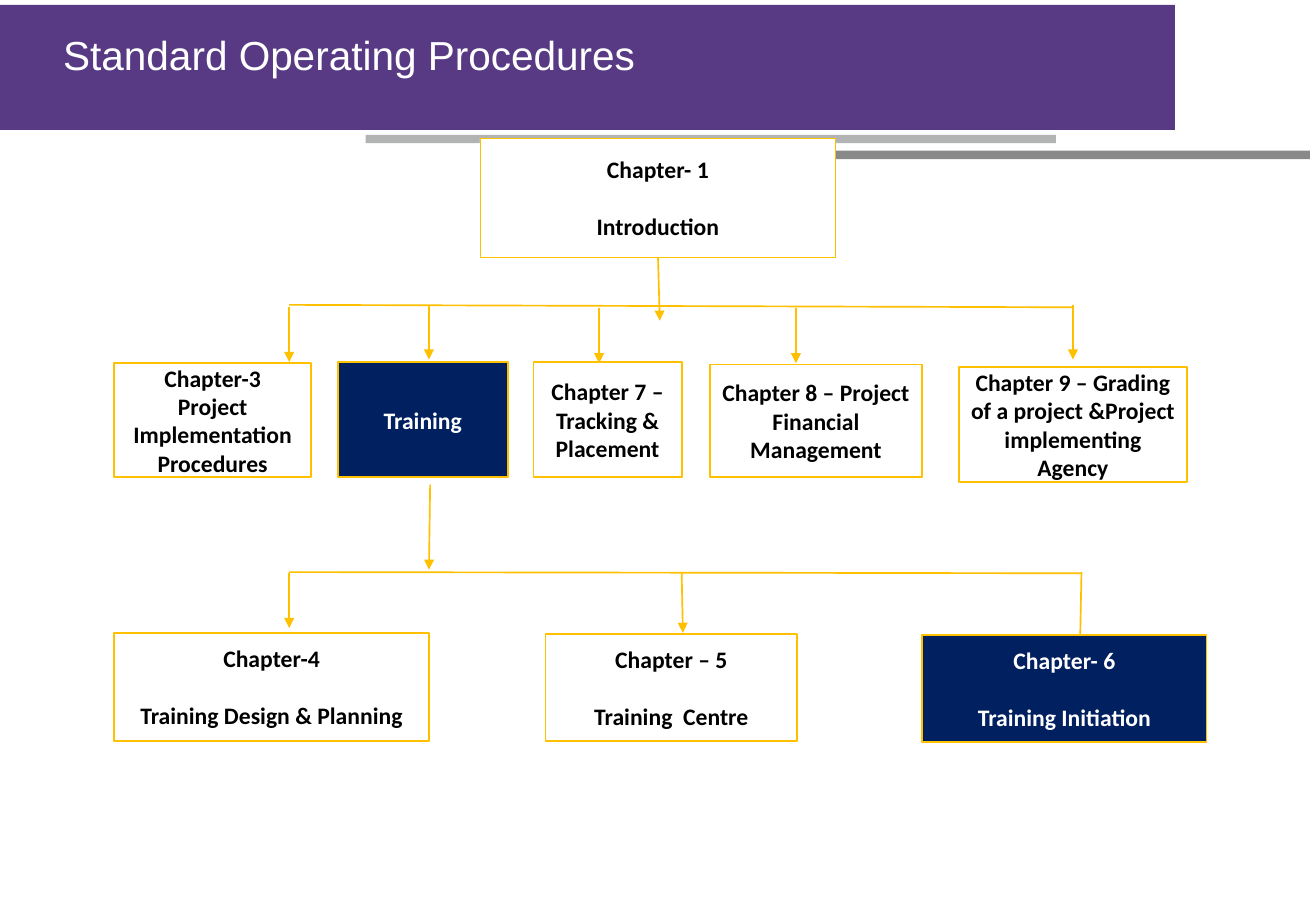
"""Build the Standard Operating Procedures chapter chart slide."""
from dataclasses import dataclass

from lxml.etree import SubElement
from pptx import Presentation
from pptx.dml.color import RGBColor
from pptx.enum.shapes import MSO_CONNECTOR as Connector, MSO_SHAPE as Shape
from pptx.enum.text import MSO_ANCHOR as Anchor, PP_ALIGN as Align
from pptx.oxml.ns import qn
from pptx.util import Inches, Pt


@dataclass(frozen=True)
class Theme:
    banner: str = "583A84"
    dark_bar: str = "898989"
    light_bar: str = "B2B3B3"
    gold: str = "FFC000"
    navy: str = "002060"
    white: str = "FFFFFF"
    black: str = "000000"
    title_font: str = "Arial"
    chapter_font: str = "Calibri"
    title_size: int = 24
    chapter_size: int = 14
    blank_line: int = 17


THEME = Theme()
TITLE = "Standard Operating Procedures"
BARS = [
    ((0, 0.04, 9.67, 1.03), THEME.banner),
    ((5.1, 1.24, 5.68, 0.07), THEME.dark_bar),
    ((3.01, 1.11, 5.68, 0.07), THEME.light_bar),
]
INTRODUCTION = (["Chapter- 1", "Introduction"], (3.95, 1.14, 2.93, 0.98))
PROCEDURES = [
    (["Chapter-3", "Project Implementation Procedures"], (0.94, 2.99, 1.62, 0.94)),
    (["Training"], (2.78, 2.98, 1.4, 0.95)),
    (["Chapter 7 – Tracking & Placement"], (4.39, 2.98, 1.22, 0.95)),
    (["Chapter 8 – Project Financial Management"], (5.84, 3, 1.75, 0.93)),
    (["Chapter 9 – Grading of a project &Project implementing Agency"],
     (7.89, 3.02, 1.88, 0.95)),
]
TRAINING_CHAPTERS = [
    (["Chapter-4", "Training Design & Planning"], (0.94, 5.21, 2.59, 0.89)),
    (["Chapter – 5", "Training  Centre"], (4.49, 5.22, 2.07, 0.88)),
    (["Chapter- 6", "Training Initiation"], (7.59, 5.23, 2.34, 0.88)),
]
HIGHLIGHTED = {"Training", "Chapter- 6"}
DROP = 0.45
PROCEDURE_DROPS = [(2.38, 2.53), (3.53, 2.51), (4.93, 2.54), (6.55, 2.54), (8.83, 2.51)]
RAILS = [(2.38, 2.51, 8.84, 2.53), (2.38, 4.71, 8.9, 4.72)]
TRAINING_ARROWS = [
    (3.54, 3.99, 3.53, 4.69),
    (2.38, 4.72, 2.38, 5.17),
    (5.61, 4.72, 5.62, 5.21),
]
INITIATION_LINE = (8.9, 4.71, 8.89, 5.22)


def rgb(color):
    """Turn a hex string into a colour."""
    return RGBColor.from_string(color)


def write(frame, lines, *, font, size, color, bold=False, align=Align.LEFT,
          anchor=Anchor.TOP, gap=0):
    """Fill a text frame with formatted paragraphs."""
    frame.word_wrap = True
    frame.vertical_anchor = anchor
    for index, line in enumerate(lines):
        paragraph = frame.add_paragraph() if index else frame.paragraphs[0]
        paragraph.alignment = align
        paragraph.space_before = Pt(gap if index else 0)
        run = paragraph.add_run()
        run.text = line
        run.font.name, run.font.size, run.font.bold = font, Pt(size), bold
        run.font.color.rgb = rgb(color)


def add_block(slide, area, fill, border=None, width=1):
    """Add a filled rectangle with an optional border."""
    block = slide.shapes.add_shape(Shape.RECTANGLE, *map(Inches, area))
    block.shadow.inherit = False
    block.fill.solid()
    block.fill.fore_color.rgb = rgb(fill)
    if border:
        block.line.color.rgb = rgb(border)
        block.line.width = Pt(width)
    else:
        block.line.fill.background()
    return block


def add_chapter(slide, lines, area, width=1, gap=0):
    """Add one chapter box with its centred label."""
    dark = lines[0] in HIGHLIGHTED
    chapter = add_block(slide, area, THEME.navy if dark else THEME.white,
                        THEME.gold, width)
    write(chapter.text_frame, lines, font=THEME.chapter_font,
          size=THEME.chapter_size, color=THEME.white if dark else THEME.black,
          bold=True, align=Align.CENTER, anchor=Anchor.MIDDLE, gap=gap)
    return chapter


def add_line(slide, ends, arrow=True):
    """Add a gold connector, with an arrowhead if asked."""
    link = slide.shapes.add_connector(Connector.STRAIGHT, *map(Inches, ends))
    link.line.color.rgb = rgb(THEME.gold)
    link.line.width = Pt(1)
    if arrow:
        SubElement(link.line._get_or_add_ln(), qn("a:tailEnd"), type="triangle")
    SubElement(link.element.spPr, qn("a:effectLst"))
    return link


def main():
    """Lay out the slide and save it."""
    deck = Presentation()
    deck.slide_width, deck.slide_height = Inches(10.83), Inches(7.5)
    slide = deck.slides.add_slide(deck.slide_layouts[5])

    for area, fill in BARS:
        add_block(slide, area, fill)

    title = slide.shapes.title
    title.left, title.top, title.width, title.height = map(Inches, (0.42, 0.2, 9.06, 0.5))
    write(title.text_frame, [TITLE], font=THEME.title_font,
          size=THEME.title_size, color=THEME.white)
    title.element.getparent().append(title.element)

    introduction = add_chapter(slide, *INTRODUCTION, width=0.5, gap=THEME.blank_line)
    for lines, area in PROCEDURES:
        add_chapter(slide, lines, area)
    for lines, area in TRAINING_CHAPTERS:
        add_chapter(slide, lines, area, gap=THEME.blank_line)

    add_line(slide, (5.41, 2.12, 5.43, 2.64)).begin_connect(introduction, 2)
    for rail in RAILS:
        add_line(slide, rail, arrow=False)
    for x, top in PROCEDURE_DROPS:
        add_line(slide, (x, top, x, top + DROP))
    for ends in TRAINING_ARROWS:
        add_line(slide, ends)
    add_line(slide, INITIATION_LINE, arrow=False)

    deck.save("out.pptx")


if __name__ == "__main__":
    main()
